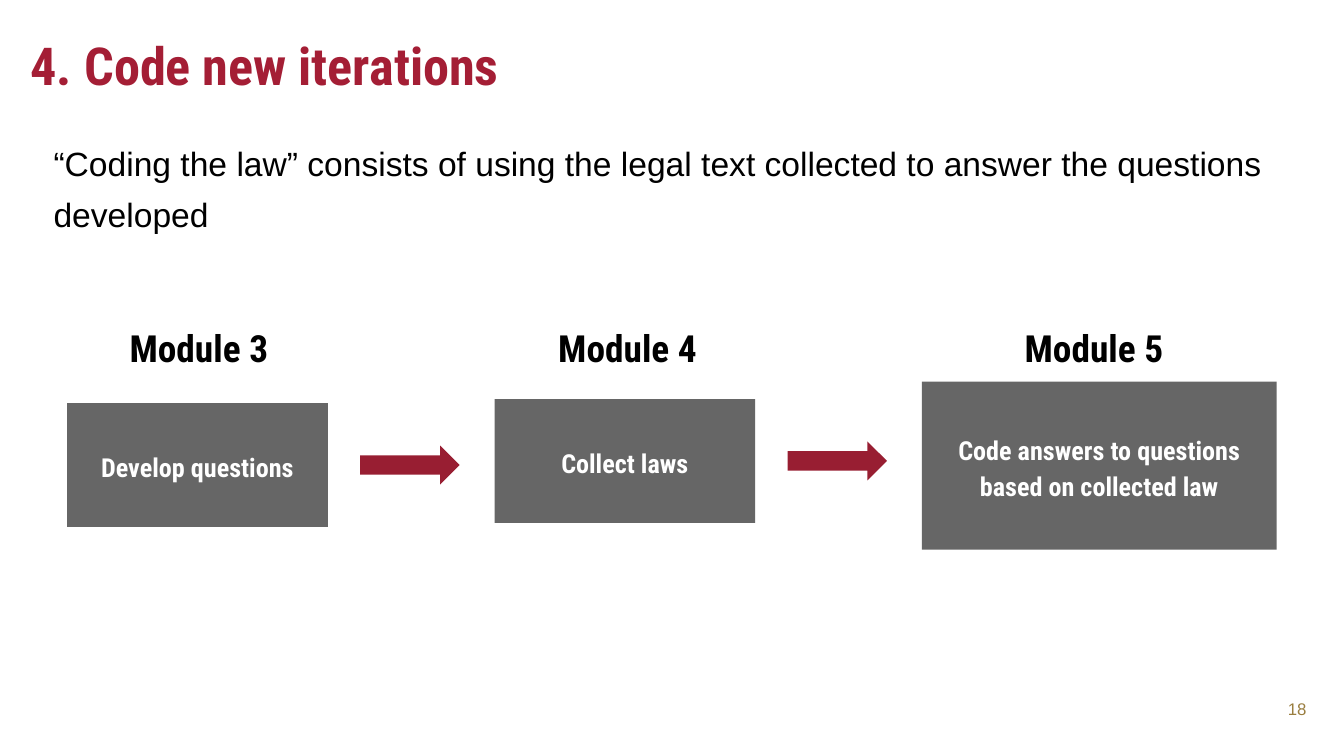
from dataclasses import dataclass

from pptx import Presentation
from pptx.dml.color import RGBColor
from pptx.enum.shapes import MSO_SHAPE
from pptx.enum.text import MSO_ANCHOR, PP_ALIGN
from pptx.shapes.autoshape import Shape
from pptx.slide import Slide
from pptx.text.text import TextFrame, _Paragraph
from pptx.util import Inches, Pt

BLACK = RGBColor(0x00, 0x00, 0x00)
WHITE = RGBColor(0xFF, 0xFF, 0xFF)
GRAY = RGBColor(0x66, 0x66, 0x66)
CRIMSON = RGBColor(0xA4, 0x1E, 0x35)
DARK_RED = RGBColor(0x98, 0x1E, 0x32)
GOLD = RGBColor(0x9A, 0x7E, 0x40)
HEADING_FONT = "Roboto Condensed"
BODY_FONT = "Arial"


@dataclass(frozen=True)
class Box:
    left: float
    top: float
    width: float
    height: float


@dataclass(frozen=True)
class TextStyle:
    font: str
    size: float
    color: RGBColor
    bold: bool = False
    align: PP_ALIGN = PP_ALIGN.LEFT


@dataclass(frozen=True)
class Module:
    heading: str
    heading_left: float
    task: str
    box: Box


TITLE = TextStyle(HEADING_FONT, 28, CRIMSON, True)
BODY = TextStyle(BODY_FONT, 18, BLACK)
PAGE_NUMBER = TextStyle(BODY_FONT, 9, GOLD, align=PP_ALIGN.RIGHT)
MODULE_HEADING = TextStyle(HEADING_FONT, 20, BLACK, True, PP_ALIGN.CENTER)
TASK = TextStyle(HEADING_FONT, 14, WHITE, True, PP_ALIGN.CENTER)

MODULES = (
    Module("Module 3", 0.72, "Develop questions", Box(0.5, 3, 1.94, 0.92)),
    Module("Module 4", 3.91, "Collect laws", Box(3.68, 2.97, 1.94, 0.92)),
    Module("Module 5", 7.38, "Code answers to questions based on collected law",
           Box(6.86, 2.84, 2.64, 1.25)),
)
ARROW_WIDTH, ARROW_HEIGHT, ARROW_GAP = 0.74, 0.29, 0.24


def write(frame: TextFrame, text: str, style: TextStyle) -> _Paragraph:
    frame.word_wrap = True
    frame.text = text
    paragraph = frame.paragraphs[0]
    paragraph.alignment = style.align
    font = paragraph.runs[0].font
    font.name, font.size, font.bold = style.font, Pt(style.size), style.bold
    font.color.rgb = style.color
    return paragraph


def add_text(slide: Slide, box: Box, text: str, style: TextStyle,
             vertical_inset: float = 0.1,
             anchor: MSO_ANCHOR = MSO_ANCHOR.TOP) -> _Paragraph:
    frame = slide.shapes.add_textbox(Inches(box.left), Inches(box.top),
                                     Inches(box.width), Inches(box.height)).text_frame
    frame.margin_left = frame.margin_right = Inches(0.1)
    frame.margin_top = frame.margin_bottom = Inches(vertical_inset)
    frame.vertical_anchor = anchor
    return write(frame, text, style)


def add_filled(slide: Slide, kind: MSO_SHAPE, box: Box, color: RGBColor) -> Shape:
    shape = slide.shapes.add_shape(kind, Inches(box.left), Inches(box.top),
                                   Inches(box.width), Inches(box.height))
    shape.shadow.inherit = False
    shape.fill.solid()
    shape.fill.fore_color.rgb = color
    shape.line.fill.background()
    return shape


def add_module(slide: Slide, module: Module) -> None:
    task_box = add_filled(slide, MSO_SHAPE.RECTANGLE, module.box, GRAY)
    task_box.text_frame.vertical_anchor = MSO_ANCHOR.MIDDLE
    task = write(task_box.text_frame, module.task, TASK)
    task.line_spacing = 1.15
    task.space_after = Pt(10)
    add_text(slide, Box(module.heading_left, 2.37, 1.52, 0.44),
             module.heading, MODULE_HEADING, vertical_inset=0.05)


def add_arrow_after(slide: Slide, box: Box) -> None:
    left = box.left + box.width + ARROW_GAP
    top = box.top + (box.height - ARROW_HEIGHT) / 2
    add_filled(slide, MSO_SHAPE.RIGHT_ARROW,
               Box(left, top, ARROW_WIDTH, ARROW_HEIGHT), DARK_RED)


def main() -> None:
    """Build the slide on coding new iterations and save it."""
    deck = Presentation()
    deck.slide_width = Inches(10)
    deck.slide_height = Inches(10 * 9 / 16)
    slide = deck.slides.add_slide(deck.slide_layouts[6])

    add_text(slide, Box(9.38, 5.09, 0.44, 0.37), "18", PAGE_NUMBER,
             anchor=MSO_ANCHOR.MIDDLE)
    add_text(slide, Box(0.13, 0.15, 9.16, 0.63), "4. Code new iterations", TITLE)
    statement = add_text(
        slide, Box(0.18, 0.89, 9.32, 3.96),
        "“Coding the law” consists of using the legal text collected "
        "to answer the questions developed", BODY)
    statement.line_spacing = 1.25
    statement._p.get_or_add_pPr().set("marL", str(Inches(0.12)))

    for module in MODULES:
        add_module(slide, module)
    for module in MODULES[:-1]:
        add_arrow_after(slide, module.box)

    deck.save("out.pptx")


if __name__ == "__main__":
    main()
